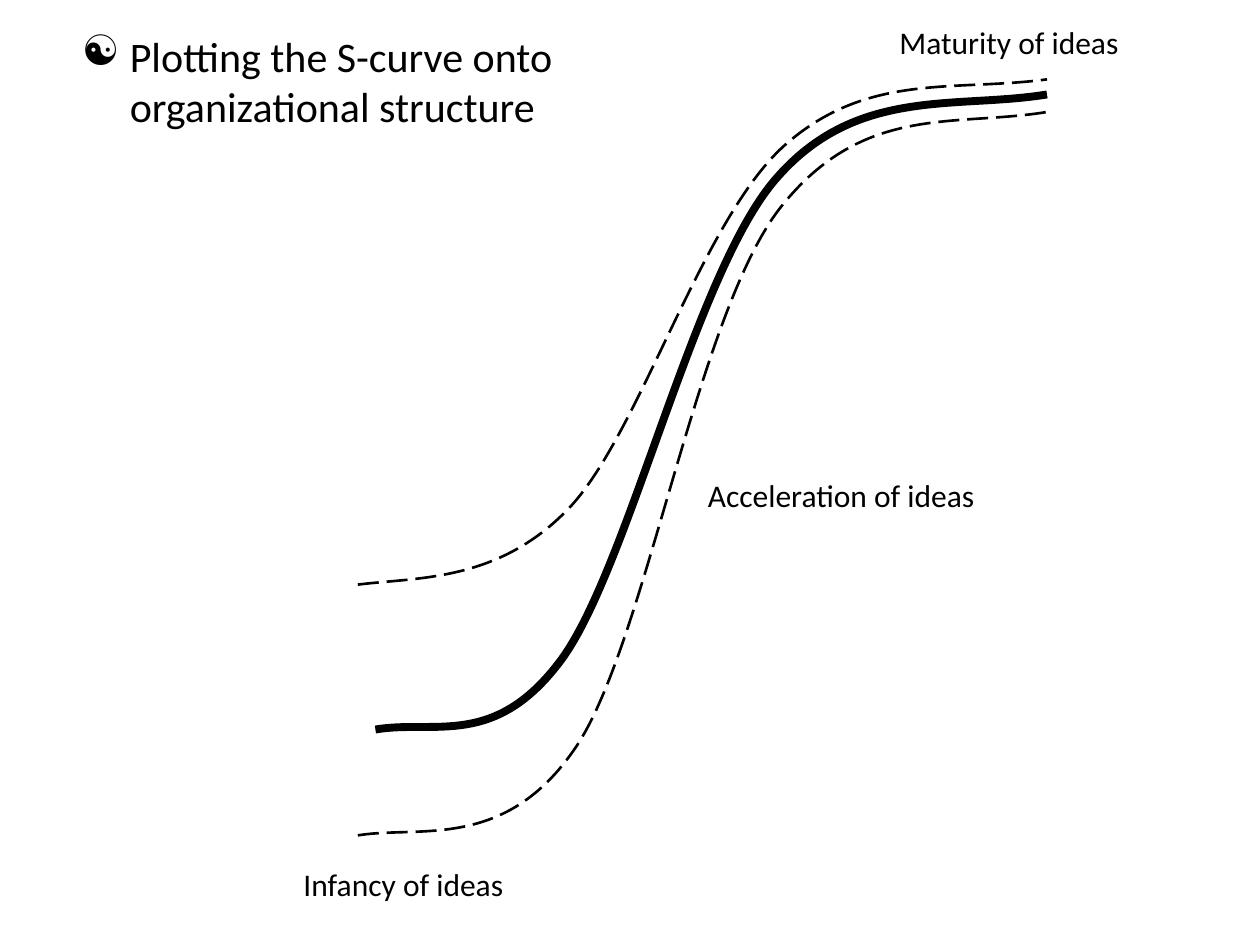
from dataclasses import dataclass

import pptx
import pptx.dml.color
import pptx.enum.dml
import pptx.enum.text
import pptx.oxml
import pptx.oxml.ns
import pptx.util

BLACK = pptx.dml.color.RGBColor(0, 0, 0)
FONT = "Calibri"
WIDE, HIGH = pptx.util.Inches(10), pptx.util.Inches(7.5)
COLS = 10  # the grid has square cells, 10 columns by 7.5 rows
HANG = 0.38
DASH = pptx.enum.dml.MSO_LINE.LONG_DASH

Point = tuple[float, float]


@dataclass
class Curve:
    """A chain of Bezier arcs: the start, then two handles and a knot per arc."""
    points: list[Point]
    weight: float
    dash: pptx.enum.dml.MSO_LINE | None = None


@dataclass
class Label:
    text: str
    col: float
    row: float
    cols: float
    rows: float = 0.4


TITLE = Label("Plotting the S-curve onto\norganizational structure", 0.55, 0.19, 3.98, 0.91)
LABELS = [
    Label("Infancy of ideas", 2.31, 6.82, 1.81),
    Label("Acceleration of ideas", 5.52, 3.73, 2.34),
    Label("Maturity of ideas", 7.04, 0.13, 1.96),
]
CURVES = [
    Curve([(2.98, 5.79), (3.45, 5.71), (3.93, 5.95), (4.46, 5.23), (4.99, 4.5),
           (5.51, 2.18), (6.15, 1.43), (6.79, 0.68), (7.58, 0.87), (8.31, 0.75)], 4.5),
    Curve([(2.84, 6.63), (3.33, 6.55), (4.01, 6.76), (4.57, 5.93), (5.13, 5.1),
           (5.53, 2.48), (6.2, 1.64), (6.87, 0.8), (7.6, 1.02), (8.36, 0.88)], 1.5, DASH),
    Curve([(2.84, 4.64), (3.32, 4.58), (3.95, 4.62), (4.51, 4.04), (5.07, 3.46),
           (5.56, 1.76), (6.22, 1.16), (6.88, 0.57), (7.56, 0.73), (8.31, 0.63)], 1.5, DASH),
]


def cells(count: float) -> int:
    return round(count * WIDE / COLS)


def write(shape, label: Label, size: int) -> None:
    """Place a text shape on the grid and fill it."""
    shape.left, shape.top = cells(label.col), cells(label.row)
    shape.width, shape.height = cells(label.cols), cells(label.rows)
    frame = shape.text_frame
    frame.text = label.text
    frame.word_wrap = False
    frame.auto_size = pptx.enum.text.MSO_AUTO_SIZE.SHAPE_TO_FIT_TEXT
    frame.vertical_anchor = pptx.enum.text.MSO_ANCHOR.TOP
    for para in frame.paragraphs:
        para.alignment = pptx.enum.text.PP_ALIGN.LEFT
        para.font.name, para.font.size = FONT, pptx.util.Pt(size)
        para.font.color.rgb = BLACK


def indent(frame) -> None:
    """Hang the first line on a bullet and line the rest up with its text."""
    for index, para in enumerate(frame.paragraphs):
        props = para._p.get_or_add_pPr()
        props.set("marL", str(cells(HANG)))
        props.set("indent", str(0 if index else -cells(HANG)))
        if index == 0:
            mark = pptx.oxml.parse_xml(
                f'<a:buChar {pptx.oxml.ns.nsdecls("a")} char="☯"/>')
            props.insert_element_before(mark, "a:tabLst", "a:defRPr", "a:extLst")


def draw(shapes, curve: Curve) -> None:
    """Build the outline through the knots, then bend each side by its handles."""
    spots = [(cells(x), cells(y)) for x, y in curve.points]
    pen = shapes.build_freeform(*spots[0])
    pen.add_line_segments(spots[3::3], close=False)
    shape = pen.convert_to_shape()
    sides = shape._element.findall(".//" + pptx.oxml.ns.qn("a:lnTo"))
    for index, side in enumerate(sides):
        arc = spots[3 * index + 1:3 * index + 4]
        marks = "".join(f'<a:pt x="{x - shape.left}" y="{y - shape.top}"/>' for x, y in arc)
        bend = pptx.oxml.parse_xml(
            f'<a:cubicBezTo {pptx.oxml.ns.nsdecls("a")}>{marks}</a:cubicBezTo>')
        side.getparent().replace(side, bend)
    shape.shadow.inherit = False
    shape.fill.background()
    shape.line.color.rgb = BLACK
    shape.line.width = pptx.util.Pt(curve.weight)
    if curve.dash:
        shape.line.dash_style = curve.dash


def main() -> None:
    deck = pptx.Presentation()
    deck.slide_width, deck.slide_height = WIDE, HIGH
    slide = deck.slides.add_slide(deck.slide_layouts[5])
    title = slide.shapes.title
    write(title, TITLE, 24)
    indent(title.text_frame)
    group = slide.shapes.add_group_shape()
    for curve in CURVES:
        draw(group.shapes, curve)
    for label in LABELS:
        write(slide.shapes.add_textbox(0, 0, 0, 0), label, 18)
    deck.save("out.pptx")


if __name__ == "__main__":
    main()
